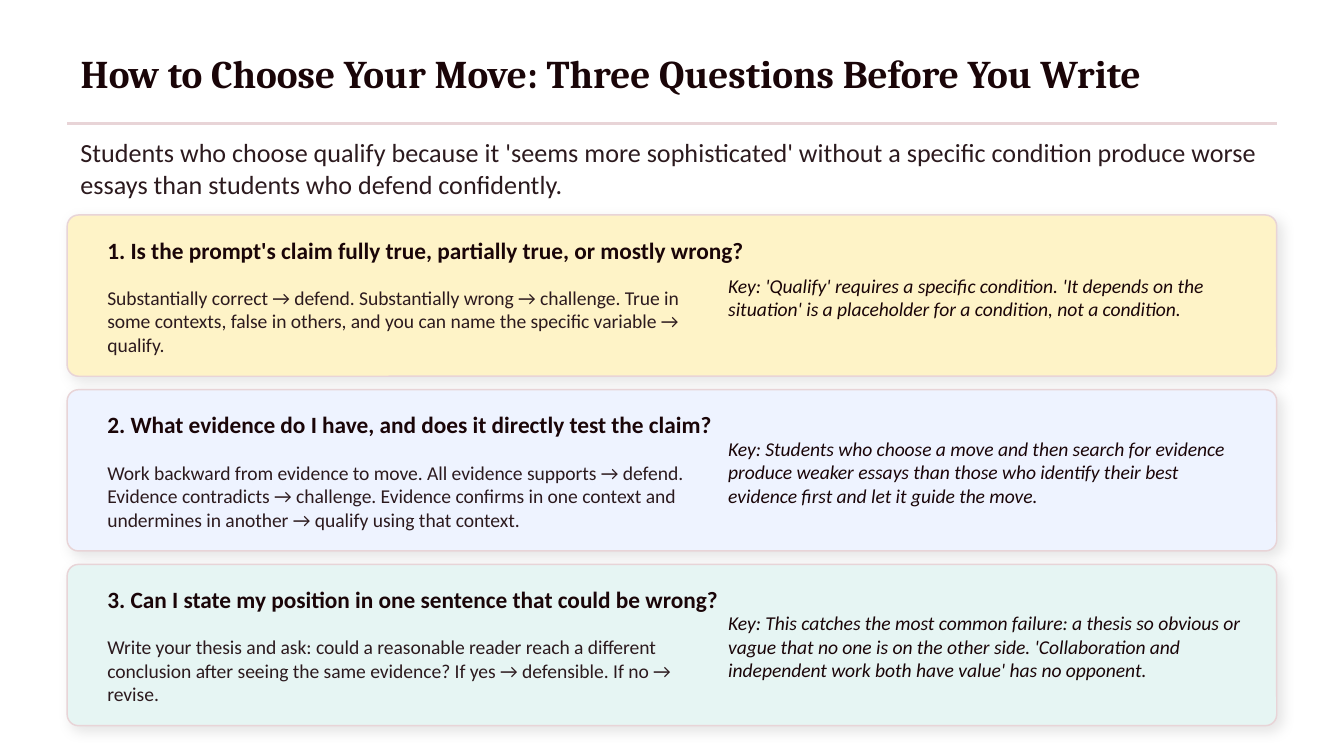
from lxml import etree
from pptx import Presentation
from pptx.dml.color import RGBColor
from pptx.enum.shapes import MSO_CONNECTOR, MSO_SHAPE
from pptx.enum.text import MSO_ANCHOR, MSO_AUTO_SIZE, PP_ALIGN
from pptx.oxml import parse_xml
from pptx.oxml.ns import nsdecls, qn
from pptx.util import Inches, Pt

ROUND = MSO_SHAPE.ROUNDED_RECTANGLE
LINE = MSO_CONNECTOR.STRAIGHT
MIDDLE = MSO_ANCHOR.MIDDLE
FIXED = MSO_AUTO_SIZE.NONE
LEFT = PP_ALIGN.LEFT

WHITE = RGBColor(0xFF, 0xFF, 0xFF)
DARK = RGBColor(0x1A, 0x05, 0x08)
BROWN = RGBColor(0x2C, 0x1A, 0x1E)
ROSE = RGBColor(0xE8, 0xD4, 0xD7)
YELLOW = RGBColor(0xFE, 0xF3, 0xC7)
BLUE = RGBColor(0xEE, 0xF3, 0xFF)
GREEN = RGBColor(0xE6, 0xF5, 0xF3)

SHADOW = (
    f'<a:outerShdw {nsdecls("a")} blurRad="{Pt(7)}" dist="{Pt(2)}" '
    'dir="2700000" algn="bl" rotWithShape="0">'
    '<a:srgbClr val="000000"><a:alpha val="9000"/></a:srgbClr></a:outerShdw>'
)

# Widescreen page, 16:9
prs = Presentation()
prs.slide_width = Inches(10)
prs.slide_height = Inches(10 * 9 / 16)
slide = prs.slides.add_slide(prs.slide_layouts[5])
slide.background.fill.solid()
slide.background.fill.fore_color.rgb = WHITE
shapes = slide.shapes


def write(box, text, size, color, face="Calibri", bold=False, italic=False):
    frame = box.text_frame
    frame.word_wrap = True
    frame.auto_size = FIXED
    frame.vertical_anchor = MIDDLE
    para = frame.paragraphs[0]
    para.alignment = LEFT
    run = para.add_run()
    run.text = text
    font = run.font
    font.name, font.size = face, Pt(size)
    font.bold, font.italic = bold, italic
    font.color.rgb = color


def add_text(left, top, width, height, text, size, color, **style):
    box = shapes.add_textbox(Inches(left), Inches(top), Inches(width), Inches(height))
    write(box, text, size, color, **style)


# Title
title = shapes.title
title.left, title.top = Inches(0.5), Inches(0.22)
title.width, title.height = Inches(9), Inches(0.65)
write(title, "How to Choose Your Move: Three Questions Before You Write",
      21, DARK, face="Cambria", bold=True)

# Rule below the title
rule = shapes.add_connector(LINE, Inches(0.5), Inches(0.92), Inches(9.5), Inches(0.92))
rule.line.color.rgb = ROSE
rule.line.width = Pt(1.2)
etree.SubElement(rule._element.spPr, qn("a:effectLst"))

# Opening statement
add_text(0.5, 1, 9, 0.5,
         "Students who choose qualify because it 'seems more sophisticated' without a "
         "specific condition produce worse essays than students who defend confidently.",
         14, BROWN)

# Question cards: fill, question, advice, key
cards = [
    (YELLOW,
     "1. Is the prompt's claim fully true, partially true, or mostly wrong?",
     "Substantially correct → defend. Substantially wrong → challenge. True in some "
     "contexts, false in others, and you can name the specific variable → qualify.",
     "Key: 'Qualify' requires a specific condition. 'It depends on the situation' is "
     "a placeholder for a condition, not a condition."),
    (BLUE,
     "2. What evidence do I have, and does it directly test the claim?",
     "Work backward from evidence to move. All evidence supports → defend. Evidence "
     "contradicts → challenge. Evidence confirms in one context and undermines in "
     "another → qualify using that context.",
     "Key: Students who choose a move and then search for evidence produce weaker "
     "essays than those who identify their best evidence first and let it guide the move."),
    (GREEN,
     "3. Can I state my position in one sentence that could be wrong?",
     "Write your thesis and ask: could a reasonable reader reach a different conclusion "
     "after seeing the same evidence? If yes → defensible. If no → revise.",
     "Key: This catches the most common failure: a thesis so obvious or vague that no "
     "one is on the other side. 'Collaboration and independent work both have value' "
     "has no opponent."),
]
for i, (fill, ask, advice, key) in enumerate(cards):
    top = 1.6 + 1.3 * i
    card = shapes.add_shape(ROUND, Inches(0.5), Inches(top), Inches(9), Inches(1.2))
    card.adjustments[0] = 0.07
    card.fill.solid()
    card.fill.fore_color.rgb = fill
    card.line.color.rgb = ROSE
    card.line.width = Pt(0.8)
    card.shadow.inherit = False
    card._element.spPr.find(qn("a:effectLst")).append(parse_xml(SHADOW))

    add_text(0.7, top + 0.08, 8.6, 0.36, ask, 12.5, DARK, bold=True)
    add_text(0.7, top + 0.46, 4.55, 0.66, advice, 10.5, BROWN)
    add_text(5.32, top + 0.1, 4.02, 1.02, key, 10.5, DARK, italic=True)

prs.save("out.pptx")
